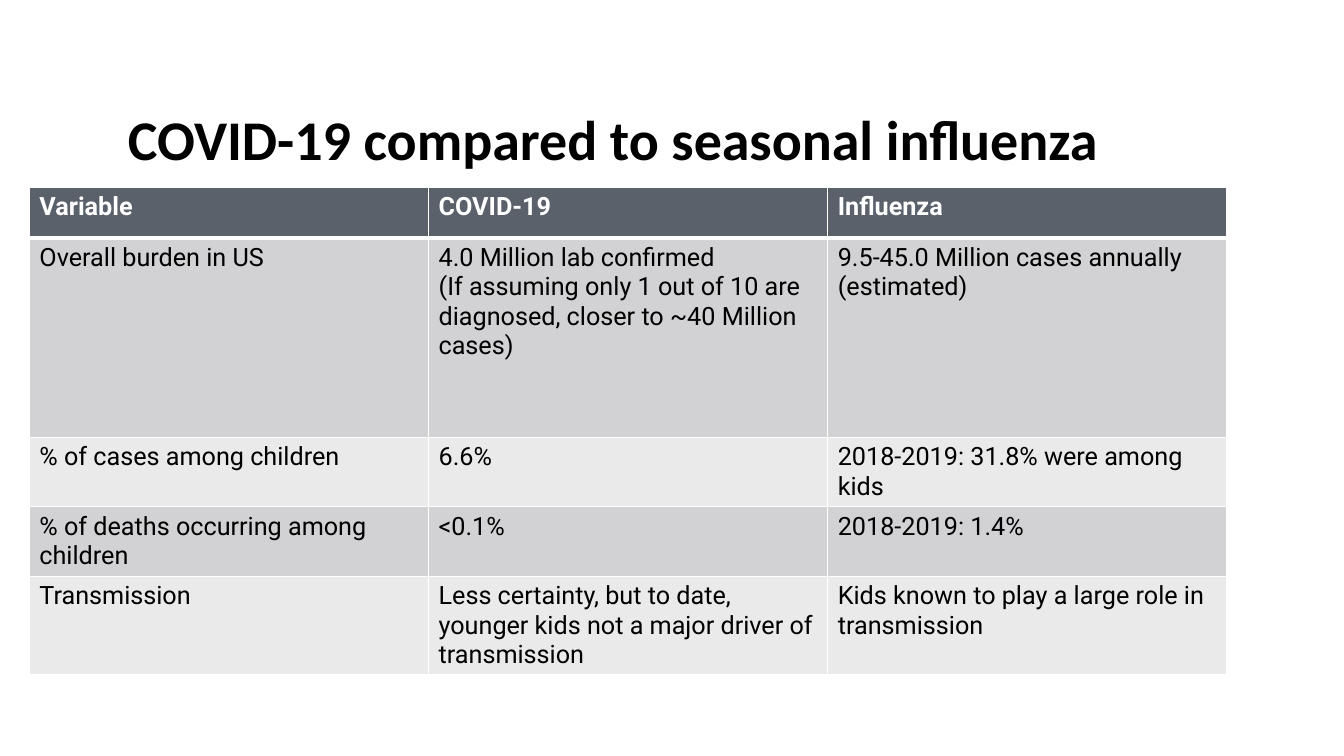
from dataclasses import dataclass

from lxml.etree import SubElement
from pptx import Presentation
from pptx.dml.color import RGBColor
from pptx.enum.text import MSO_ANCHOR, MSO_AUTO_SIZE, PP_ALIGN
from pptx.oxml.ns import qn
from pptx.slide import Slide
from pptx.table import _Cell
from pptx.text.text import TextFrame
from pptx.util import Cm, Pt

COLORS = {
    "header": "5B616B",
    "band_dark": "D2D2D4",
    "band_light": "EAEAEB",
    "border": "FFFFFF",
    "header_text": "FFFFFF",
    "text": "000000",
}


@dataclass
class Row:
    height: float
    fill: str
    cells: tuple[str, str, str]
    color: str = "text"
    bold: bool = False
    bottom: float = 1


ROWS = [
    Row(1.27, "header", ("Variable", "COVID-19", "Influenza"), "header_text", True, 3),
    Row(5.03, "band_dark", (
        "Overall burden in US",
        "4.0 Million lab confirmed\n"
        "(If assuming only 1 out of 10 are diagnosed, closer to ~40 Million cases)",
        "9.5-45.0 Million cases annually\n(estimated)",
    )),
    Row(1.75, "band_light", (
        "% of cases among children", "6.6%", "2018-2019: 31.8% were among kids",
    )),
    Row(1.75, "band_dark", (
        "% of deaths occurring among children", "<0.1%", "2018-2019: 1.4%",
    )),
    Row(2.48, "band_light", (
        "Transmission",
        "Less certainty, but to date, younger kids not a major driver of transmission",
        "Kids known to play a large role in transmission",
    )),
]
COL_WIDTH = 10.06


def write(tf: TextFrame, text: str, *, font: str, size: float, color: str,
          bold: bool = False, spacing: float = 1) -> None:
    tf.word_wrap = True
    for i, line in enumerate(text.split("\n")):
        p = tf.add_paragraph() if i else tf.paragraphs[0]
        p.alignment = PP_ALIGN.LEFT
        p.line_spacing = spacing
        r = p.add_run()
        r.text = line
        r.font.name = font
        r.font.size = Pt(size)
        r.font.bold = bold
        r.font.color.rgb = RGBColor.from_string(COLORS[color])


def set_borders(cell: _Cell, top: float, bottom: float) -> None:
    tc_pr = cell._tc.get_or_add_tcPr()
    for side, width in {"L": 1, "R": 1, "T": top, "B": bottom}.items():
        ln = SubElement(tc_pr, qn(f"a:ln{side}"), w=str(Pt(width)))
        fill = SubElement(ln, qn("a:solidFill"))
        SubElement(fill, qn("a:srgbClr"), val=COLORS["border"])


def add_title(s: Slide, text: str) -> None:
    sp = s.shapes.title
    sp.left, sp.top, sp.width, sp.height = Cm(2.97), Cm(1.35), Cm(30.18), Cm(4.47)
    tf = sp.text_frame
    tf.auto_size = MSO_AUTO_SIZE.NONE
    tf.vertical_anchor = MSO_ANCHOR.MIDDLE
    write(tf, text, font="Calibri", size=40, color="text", bold=True, spacing=0.9)


def add_comparison(s: Slide, rows: list[Row]) -> None:
    cols = len(rows[0].cells)
    table = s.shapes.add_table(
        len(rows), cols, Cm(0.74), Cm(4.72),
        Cm(COL_WIDTH * cols), Cm(sum(row.height for row in rows)),
    ).table
    table.horz_banding = False
    for col in table.columns:
        col.width = Cm(COL_WIDTH)
    top = 1
    for i, row in enumerate(rows):
        table.rows[i].height = Cm(row.height)
        for j, text in enumerate(row.cells):
            cell = table.cell(i, j)
            set_borders(cell, top, row.bottom)
            cell.fill.solid()
            cell.fill.fore_color.rgb = RGBColor.from_string(COLORS[row.fill])
            write(cell.text_frame, text, font="Roboto", size=18,
                  color=row.color, bold=row.bold)
        top = row.bottom


def main() -> None:
    prs = Presentation()
    prs.slide_width, prs.slide_height = Cm(33.87), Cm(19.05)
    s = prs.slides.add_slide(prs.slide_layouts[5])
    add_title(s, "COVID-19 compared to seasonal influenza")
    add_comparison(s, ROWS)
    prs.save("out.pptx")


if __name__ == "__main__":
    main()
